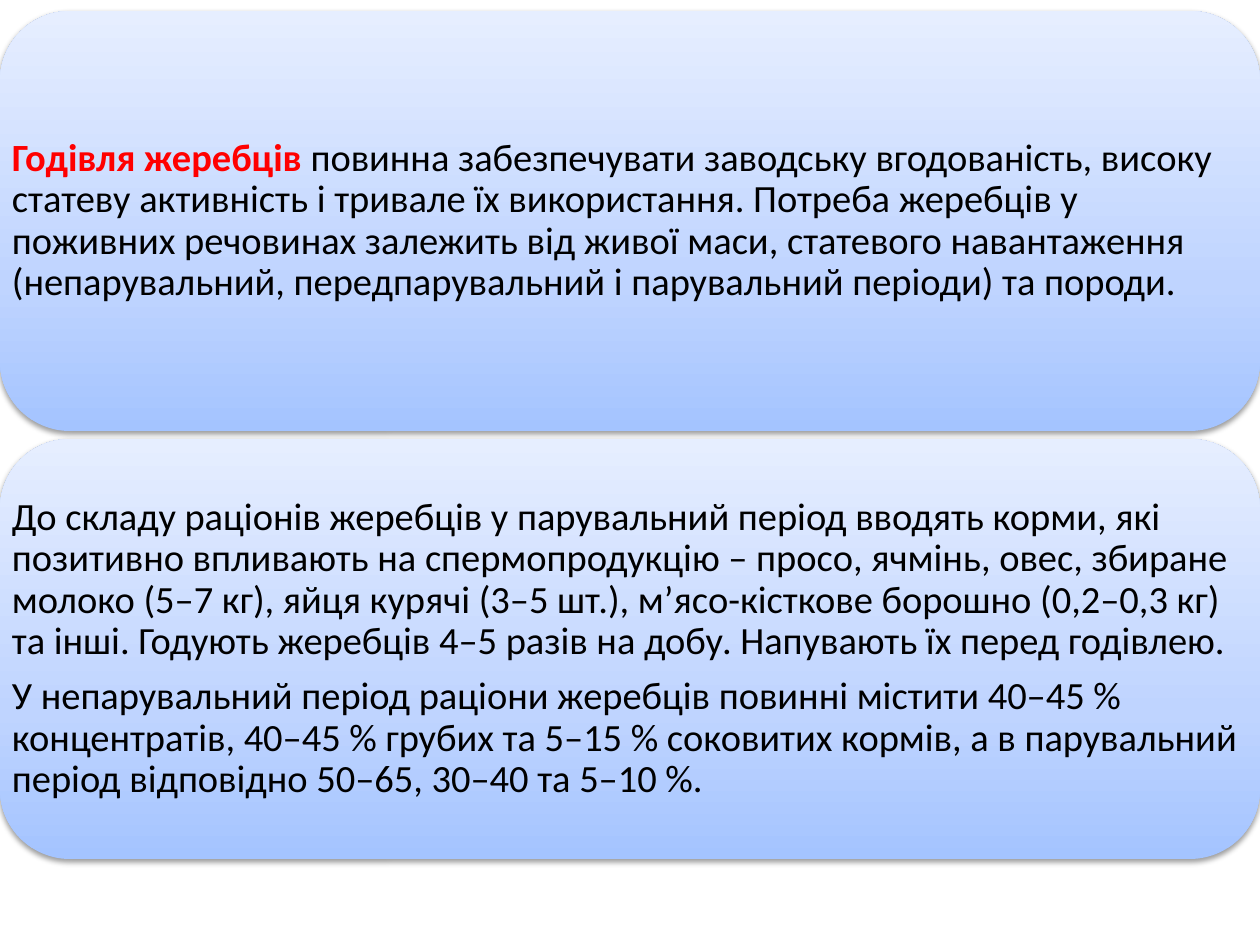
from dataclasses import dataclass

from lxml import etree
from pptx import Presentation
from pptx.dml.color import RGBColor
from pptx.enum.shapes import MSO_SHAPE
from pptx.enum.text import MSO_ANCHOR, PP_ALIGN
from pptx.oxml import parse_xml
from pptx.oxml.ns import nsdecls, qn
from pptx.util import Emu, Pt

ROUND = MSO_SHAPE.ROUNDED_RECTANGLE
MIDDLE = MSO_ANCHOR.MIDDLE
LEFT = PP_ALIGN.LEFT

SCALE = 914400 / 126  # EMU in one px
WIDTH, HEIGHT = 1260, 945
TOP, TALL, GAP = 11, 420, 8
INSET = 12


@dataclass(frozen=True)
class Theme:
    font: str = "Calibri"
    size: float = 22
    after: float = 7.7
    leading: float = 0.9
    ink: str = "000000"
    accent: str = "FF0000"
    shade: str = "000000"
    stops: tuple = ((0, "A4C4FF"), (35, "BFD4FF"), (100, "E6EEFF"))


THEME = Theme()

# Each panel is a list of paragraphs, each paragraph a list of (text, lead) runs
PANELS = [
    [
        [
            ("Годівля жеребців ", True),
            ("повинна забезпечувати заводську вгодованість, високу статеву "
             "активність і тривале їх використання. Потреба жеребців у поживних "
             "речовинах залежить від живої маси, статевого навантаження "
             "(непарувальний, передпарувальний і парувальний періоди) та породи.",
             False),
        ],
    ],
    [
        [
            ("До складу раціонів жеребців у парувальний період вводять корми, які "
             "позитивно впливають на спермопродукцію – просо, ячмінь, овес, збиране "
             "молоко (5–7 кг), яйця курячі (3–5 шт.), м’ясо-кісткове борошно "
             "(0,2–0,3 кг) та інші. Годують жеребців 4–5 разів на добу. "
             "Напувають їх перед годівлею.", False),
        ],
        [
            ("У непарувальний період раціони жеребців повинні містити 40–45 % "
             "концентратів, 40–45 % грубих та 5–15 % соковитих кормів, а в "
             "парувальний період відповідно 50–65, 30–40 та 5–10 %.", False),
        ],
    ],
]


def px(n):
    return Emu(round(n * SCALE))


def shade(shape):
    """Give the shape its upward gradient and soft shadow."""
    props = shape.fill
    props.gradient()
    props.gradient_angle = 90
    grad = shape.element.spPr.find(qn("a:gradFill"))
    stops = grad.find(qn("a:gsLst"))
    for stop in list(stops):
        stops.remove(stop)
    for pos, color in THEME.stops:
        stop = etree.SubElement(stops, qn("a:gs"), pos=str(pos * 1000))
        etree.SubElement(stop, qn("a:srgbClr"), val=color)

    shape.shadow.inherit = False
    effects = shape.element.spPr.find(qn("a:effectLst"))
    effects.append(parse_xml(
        f'<a:outerShdw {nsdecls("a")} blurRad="40000" dist="20000" '
        f'dir="5400000" rotWithShape="0"><a:srgbClr val="{THEME.shade}">'
        '<a:alpha val="38000"/></a:srgbClr></a:outerShdw>'))


def write(frame, paras):
    for i, runs in enumerate(paras):
        para = frame.paragraphs[0] if i == 0 else frame.add_paragraph()
        para.alignment = LEFT
        para.line_spacing = THEME.leading
        para.space_after = Pt(THEME.after)
        for text, lead in runs:
            run = para.add_run()
            run.text = text
            font = run.font
            font.name = THEME.font
            font.size = Pt(THEME.size)
            font.bold = lead
            font.color.rgb = RGBColor.from_string(
                THEME.accent if lead else THEME.ink)


def panel(slide, box, paras):
    area = [px(n) for n in box]

    # Rounded card
    card = slide.shapes.add_shape(ROUND, *area)
    card.line.fill.background()
    shade(card)

    # Text over the full width of the card
    frame = slide.shapes.add_textbox(*area).text_frame
    frame.word_wrap = True
    frame.vertical_anchor = MIDDLE
    frame.margin_left = frame.margin_right = px(INSET)
    frame.margin_top = frame.margin_bottom = px(INSET)
    write(frame, paras)


def main():
    deck = Presentation()
    deck.slide_width, deck.slide_height = px(WIDTH), px(HEIGHT)
    slide = deck.slides.add_slide(deck.slide_layouts[6])
    for i, paras in enumerate(PANELS):
        panel(slide, (0, TOP + i * (TALL + GAP), WIDTH, TALL), paras)
    deck.save("out.pptx")


if __name__ == "__main__":
    main()
